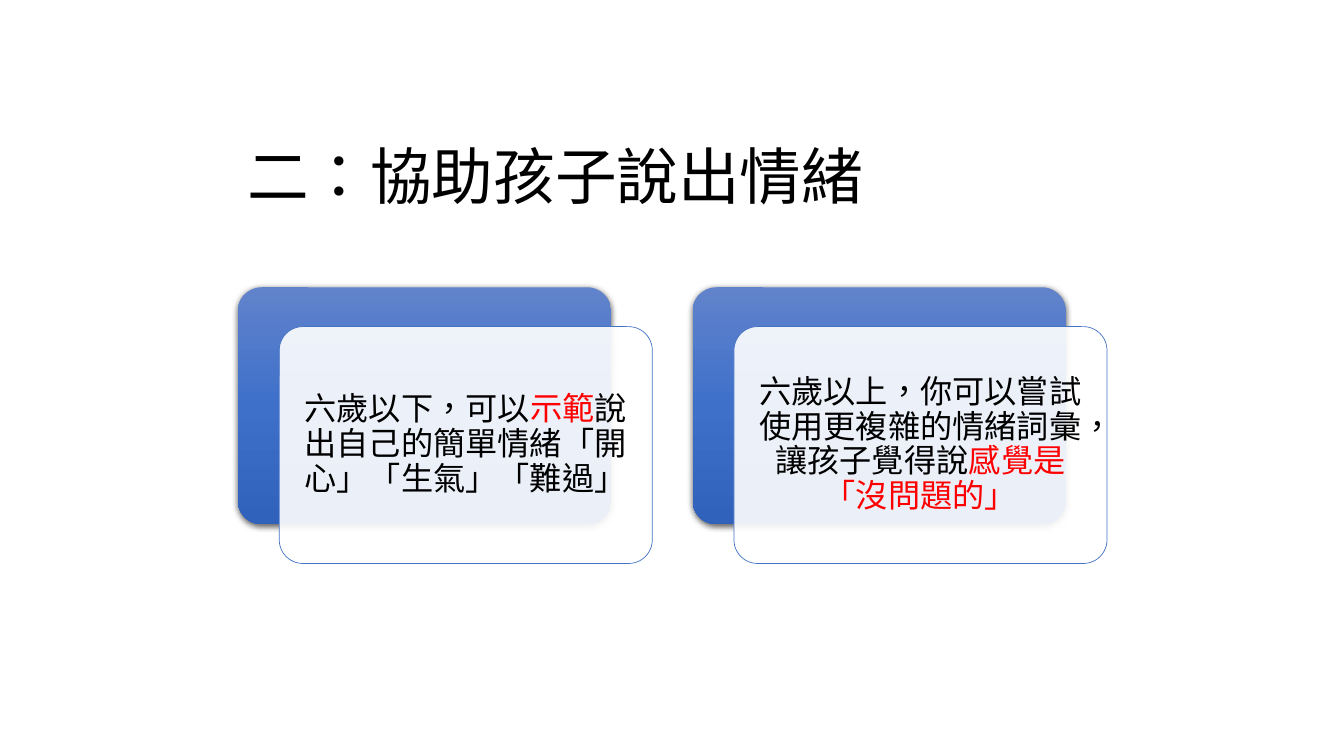
from dataclasses import dataclass

from lxml import etree
from pptx import Presentation
from pptx import util as u
from pptx.dml.color import RGBColor
from pptx.enum import lang, shapes, text
from pptx.oxml import ns


@dataclass(frozen=True)
class Theme:
    ink: str = "000000"
    red: str = "FF0000"
    white: str = "FFFFFF"
    edge: str = "4472C4"
    blues: tuple = ((0, "6183CB"), (50, "3E70CA"), (100, "3062BB"))
    head: int = 44
    body: int = 23
    latin: str = "Calibri"
    asian: str = "Noto Sans CJK TC"


THEME = Theme()
CARDS = (
    (("六歲以下，可以", THEME.ink), ("示範", THEME.red),
     ("說出自己的簡單情緒「開心」「生氣」「難過」", THEME.ink)),
    (("六歲以上，你可以嘗試使用更複雜的情緒詞彙，讓孩子覺得說", THEME.ink),
     ("感覺是「沒問題的」", THEME.red)),
)


def node(root, tag, **attrs):
    item = etree.SubElement(root, ns.qn(tag))
    for key, value in attrs.items():
        item.set(key, str(value))
    return item


def write(para, parts, size, latin):
    para.line_spacing = 0.9
    para.font.size = u.Pt(size)
    para.font.name = latin
    for words, color in parts:
        run = para.add_run()
        run.text = words
        run.font.color.rgb = RGBColor.from_string(color)
        run.font.language_id = lang.MSO_LANGUAGE_ID.TRADITIONAL_CHINESE
        node(run.font._element, "a:ea", typeface=THEME.asian)


def place(item, left, top, width, height):
    item.left, item.top = u.Inches(left), u.Inches(top)
    item.width, item.height = u.Inches(width), u.Inches(height)


def add_title(slide, left, top, width, height):
    title = slide.shapes.title
    place(title, left, top, width, height)
    frame = title.text_frame
    frame.word_wrap = True
    frame.vertical_anchor = text.MSO_ANCHOR.MIDDLE
    para = frame.paragraphs[0]
    para.alignment = text.PP_ALIGN.LEFT
    write(para, [("二：協助孩子說出情緒", THEME.ink)], THEME.head, THEME.asian)


def add_panel(slide, left, top, width, height):
    panel = slide.shapes.add_shape(
        shapes.MSO_SHAPE.ROUNDED_RECTANGLE,
        u.Inches(left), u.Inches(top), u.Inches(width), u.Inches(height))
    panel.adjustments[0] = 0.1
    panel.shadow.inherit = False
    return panel


def shade(panel):
    panel.line.fill.background()
    panel.fill.gradient()
    grad = panel._element.spPr.find(ns.qn("a:gradFill"))
    for child in list(grad):
        grad.remove(child)
    stops = node(grad, "a:gsLst")
    for pos, color in THEME.blues:
        node(node(stops, "a:gs", pos=pos * 1000), "a:srgbClr", val=color)
    node(grad, "a:lin", ang=90 * 60000, scaled=0)
    effects = panel._element.spPr.find(ns.qn("a:effectLst"))
    shadow = node(effects, "a:outerShdw", blurRad=u.Pt(4.5), dist=u.Pt(1.5),
                  dir=90 * 60000, algn="ctr", rotWithShape=0)
    node(node(shadow, "a:srgbClr", val=THEME.ink), "a:alpha", val=63000)


def glaze(panel):
    panel.fill.solid()
    panel.fill.fore_color.rgb = RGBColor.from_string(THEME.white)
    color = panel._element.spPr.find(ns.qn("a:solidFill"))[0]
    node(color, "a:alpha", val=90000)
    panel.line.color.rgb = RGBColor.from_string(THEME.edge)
    panel.line.width = u.Pt(0.5)


def add_card(slide, parts, left, top, width, height):
    shift_x, shift_y, inset = 0.41, 0.39, 0.07
    shade(add_panel(slide, left, top, width, height))
    left, top = left + shift_x, top + shift_y
    glaze(add_panel(slide, left, top, width, height))
    box = slide.shapes.add_textbox(
        u.Inches(left + inset), u.Inches(top + inset),
        u.Inches(width - 2 * inset), u.Inches(height - 2 * inset))
    frame = box.text_frame
    frame.word_wrap = True
    frame.vertical_anchor = text.MSO_ANCHOR.MIDDLE
    frame.margin_left = frame.margin_right = u.Inches(0.1)
    frame.margin_top = frame.margin_bottom = u.Inches(0.1)
    para = frame.paragraphs[0]
    para.alignment = text.PP_ALIGN.CENTER
    para.space_after = u.Pt(8)
    write(para, parts, THEME.body, THEME.latin)


def add_cards(slide, left, top, step):
    for index, parts in enumerate(CARDS):
        add_card(slide, parts, left + index * step, top, 3.7, 2.35)


def main():
    deck = Presentation()
    deck.slide_width, deck.slide_height = u.Inches(13.33), u.Inches(7.5)
    slide = deck.slides.add_slide(deck.slide_layouts[5])
    add_title(slide, 2.35, 1.24, 8.62, 1.09)
    add_cards(slide, 2.36, 2.85, 4.51)
    deck.save("out.pptx")


if __name__ == "__main__":
    main()
